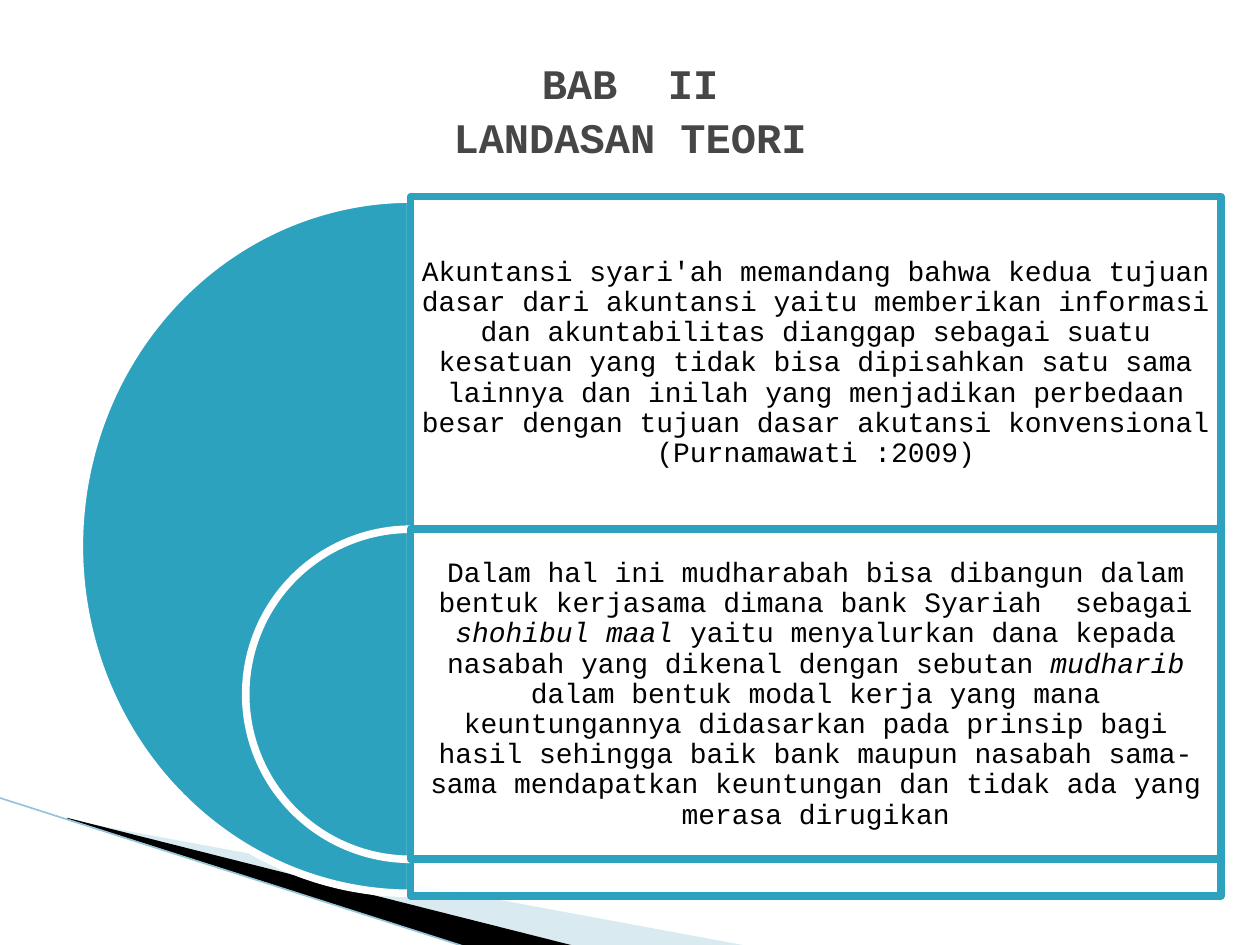
from lxml.etree import SubElement
from pptx import Presentation
from pptx.dml.color import RGBColor
from pptx.enum.shapes import MSO_CONNECTOR as Connector, MSO_SHAPE as Shape
from pptx.enum.text import MSO_ANCHOR as Anchor, PP_ALIGN as Align
from pptx.oxml.ns import qn
from pptx.util import Inches, Pt

FONT = "Courier New"
TEAL, WHITE, BLACK, GREY, PALE = "2DA2BF", "FFFFFF", "000000", "464646", "A0CBDC"
TITLE = "BAB  II\vLANDASAN TEORI"
# Each text is a list of (words, italic)
THEORY = [
    ("Akuntansi syari'ah memandang bahwa kedua tujuan dasar dari akuntansi yaitu "
     "memberikan informasi dan akuntabilitas dianggap sebagai suatu kesatuan yang "
     "tidak bisa dipisahkan satu sama lainnya dan inilah yang menjadikan perbedaan "
     "besar dengan tujuan dasar akutansi konvensional (Purnamawati :2009)", False),
]
PARTNERSHIP = [
    ("Dalam hal ini mudharabah bisa dibangun dalam bentuk kerjasama dimana bank "
     "Syariah  sebagai ", False),
    ("shohibul maal ", True),
    ("yaitu menyalurkan dana kepada nasabah yang dikenal dengan sebutan ", False),
    ("mudharib ", True),
    ("dalam bentuk modal kerja yang mana keuntungannya didasarkan pada prinsip bagi "
     "hasil sehingga baik bank maupun nasabah sama-sama mendapatkan keuntungan dan "
     "tidak ada yang merasa dirugikan", False),
]
WIDTH, HEIGHT = 10, 7.5
PANEL_LEFT, PANEL_WIDTH = 3.26, 6.43
PANEL_TOP, SPLIT = 1.56, 4.2
# top, panel height, pie width, pie height, text height, text
LEVELS = [
    (PANEL_TOP, 5.55, 5.26, 5.51, SPLIT - PANEL_TOP, THEORY),
    (SPLIT, 2.62, 2.62, 2.62, 2.62, PARTNERSHIP),
]
# points, colour, opacity in percent
SWEEPS = [
    ([(0.55, 6.51), (5.95, 7.51), (4.56, 7.51), (0.55, 6.5)], PALE, 40),
    ([(0.53, 6.49), (4.57, 7.51), (3.72, 7.52), (0.54, 6.5)], BLACK, 100),
]


def colour(value):
    return RGBColor.from_string(value)


def paint(shape, fill, line=None, opacity=100):
    shape.shadow.inherit = False
    shape.fill.solid()
    shape.fill.fore_color.rgb = colour(fill)
    if opacity < 100:
        tint = shape.fill._xPr.find(qn("a:solidFill"))[0]
        SubElement(tint, qn("a:alpha"), val=str(opacity * 1000))
    if line:
        shape.line.color.rgb = colour(line)
        shape.line.width = Pt(4.33)
    else:
        shape.line.fill.background()


def add_text(slide, box, runs, size, ink, spacing, margin=None, bold=False):
    frame = slide.shapes.add_textbox(*map(Inches, box)).text_frame
    frame.word_wrap = True
    frame.vertical_anchor = Anchor.MIDDLE
    if margin is not None:
        frame.margin_left = frame.margin_right = Inches(margin)
        frame.margin_top = frame.margin_bottom = Inches(margin)
    paragraph = frame.paragraphs[0]
    paragraph.alignment = Align.CENTER
    paragraph.line_spacing = spacing
    font = paragraph.font
    font.name, font.size, font.bold = FONT, Pt(size), bold
    font.color.rgb = colour(ink)
    for words, italic in runs:
        if "\v" in words:
            first, second = words.split("\v")
            paragraph.add_run().text = first
            paragraph.add_line_break()
            words = second
        run = paragraph.add_run()
        run.text = words
        if italic:
            run.font.italic = True


def add_sweeps(slide):
    for points, fill, opacity in SWEEPS:
        corners = [(Inches(x), Inches(y)) for x, y in points]
        builder = slide.shapes.build_freeform(*corners[0])
        builder.add_line_segments(corners[1:], close=True)
        paint(builder.convert_to_shape(), fill, opacity=opacity)
    edge = slide.shapes.add_connector(
        Connector.STRAIGHT, *map(Inches, (-0.01, 6.33, 3.71, 7.52)))
    edge.line.color.rgb = colour("97C5D8")
    edge.line.width = Pt(0.95)
    SubElement(edge._element.spPr, qn("a:effectLst"))


def add_level(slide, top, height, pie_width, pie_height, text_height, text):
    """Half disc centred on the panel's left side, then the panel and its text."""
    pie_top = top + (height - pie_height) / 2
    pie = slide.shapes.add_shape(Shape.PIE, *map(
        Inches, (PANEL_LEFT - pie_width / 2, pie_top, pie_width, pie_height)))
    pie.adjustments[0], pie.adjustments[1] = 54, 162  # 90 to 270 degrees
    paint(pie, TEAL, WHITE)
    panel = slide.shapes.add_shape(Shape.RECTANGLE, *map(
        Inches, (PANEL_LEFT, top, PANEL_WIDTH, height)))
    paint(panel, WHITE, TEAL, 90)
    add_text(slide, (PANEL_LEFT, top, PANEL_WIDTH, text_height), text,
             16, BLACK, 0.9, margin=0.07)


def main():
    presentation = Presentation()
    presentation.slide_width, presentation.slide_height = Inches(WIDTH), Inches(HEIGHT)
    slide = presentation.slides.add_slide(presentation.slide_layouts[6])
    add_sweeps(slide)
    for level in LEVELS:
        add_level(slide, *level)
    add_text(slide, (0.5, 0.31, WIDTH - 1, 1.09), [(TITLE, False)],
             24, GREY, 1.07, bold=True)
    presentation.save("out.pptx")


if __name__ == "__main__":
    main()
